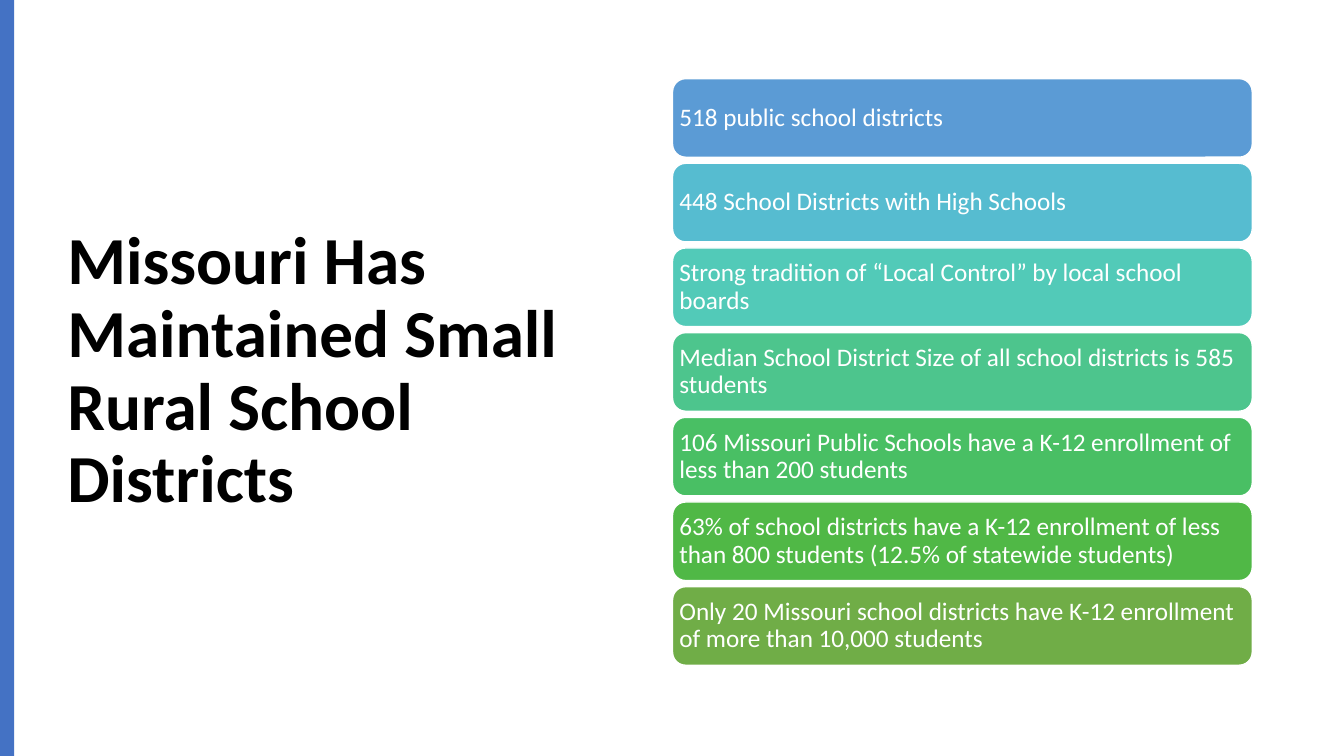
import pptx
import pptx.util
import pptx.dml.color
import pptx.enum.shapes
import pptx.enum.text

PX = 9144
WHITE = pptx.dml.color.RGBColor(0xFF, 0xFF, 0xFF)
BLACK = pptx.dml.color.RGBColor(0x00, 0x00, 0x00)
BLUE = pptx.dml.color.RGBColor(0x44, 0x72, 0xC4)
SKY = pptx.dml.color.RGBColor(0x5B, 0x9B, 0xD5)
CYAN = pptx.dml.color.RGBColor(0x56, 0xBC, 0xD0)
TEAL = pptx.dml.color.RGBColor(0x52, 0xCA, 0xB8)
MINT = pptx.dml.color.RGBColor(0x4D, 0xC5, 0x8D)
EMERALD = pptx.dml.color.RGBColor(0x49, 0xBF, 0x64)
GREEN = pptx.dml.color.RGBColor(0x50, 0xB8, 0x46)
OLIVE = pptx.dml.color.RGBColor(0x70, 0xAD, 0x47)

FACTS = [
    ("518 public school districts", SKY),
    ("448 School Districts with High Schools", CYAN),
    ("Strong tradition of “Local Control” by local school boards", TEAL),
    ("Median School District Size of all school districts is 585 students", MINT),
    ("106 Missouri Public Schools have a K-12 enrollment of less than 200 students", EMERALD),
    ("63% of school districts have a K-12 enrollment of less than 800 students "
     "(12.5% of statewide students)", GREEN),
    ("Only 20 Missouri school districts have K-12 enrollment of more than 10,000 students", OLIVE),
]
FACT_LEFT, FACT_TOP, FACT_WIDTH, FACT_HEIGHT, FACT_PITCH = 667, 78, 575, 78, 84


def write_text(holder, text, size, color, bold=False, inset_x=10, inset_y=5):
    frame = holder.text_frame
    frame.word_wrap = True
    frame.vertical_anchor = pptx.enum.text.MSO_ANCHOR.MIDDLE
    frame.margin_left = frame.margin_right = inset_x * PX
    frame.margin_top = frame.margin_bottom = inset_y * PX
    paragraph = frame.paragraphs[0]
    paragraph.alignment = pptx.enum.text.PP_ALIGN.LEFT
    paragraph.line_spacing = 0.9
    run = paragraph.add_run()
    run.text = text
    run.font.name = "Calibri"
    run.font.size = pptx.util.Pt(size)
    run.font.bold = bold
    run.font.color.rgb = color


deck = pptx.Presentation()
deck.slide_width = 1333 * PX
deck.slide_height = 750 * PX
slide = deck.slides.add_slide(deck.slide_layouts[6])

title = slide.shapes.add_textbox(57 * PX, 68 * PX, 567 * PX, 602 * PX)
write_text(title, "Missouri Has Maintained Small Rural School Districts",
           size=48, color=BLACK, bold=True)

edge_band = slide.shapes.add_shape(
    pptx.enum.shapes.MSO_SHAPE.RECTANGLE, 0, 0, 14 * PX, 750 * PX)
edge_band.shadow.inherit = False
edge_band.fill.solid()
edge_band.fill.fore_color.rgb = BLUE
edge_band.line.fill.background()

for row, (fact, color) in enumerate(FACTS):
    fact_bar = slide.shapes.add_shape(
        pptx.enum.shapes.MSO_SHAPE.ROUNDED_RECTANGLE,
        FACT_LEFT * PX, (FACT_TOP + row * FACT_PITCH) * PX,
        FACT_WIDTH * PX, FACT_HEIGHT * PX)
    fact_bar.shadow.inherit = False
    fact_bar.fill.solid()
    fact_bar.fill.fore_color.rgb = color
    fact_bar.line.color.rgb = WHITE
    fact_bar.line.width = pptx.util.Pt(1)
    write_text(fact_bar, fact, size=18, color=WHITE, inset_x=3, inset_y=3)

deck.save("out.pptx")
